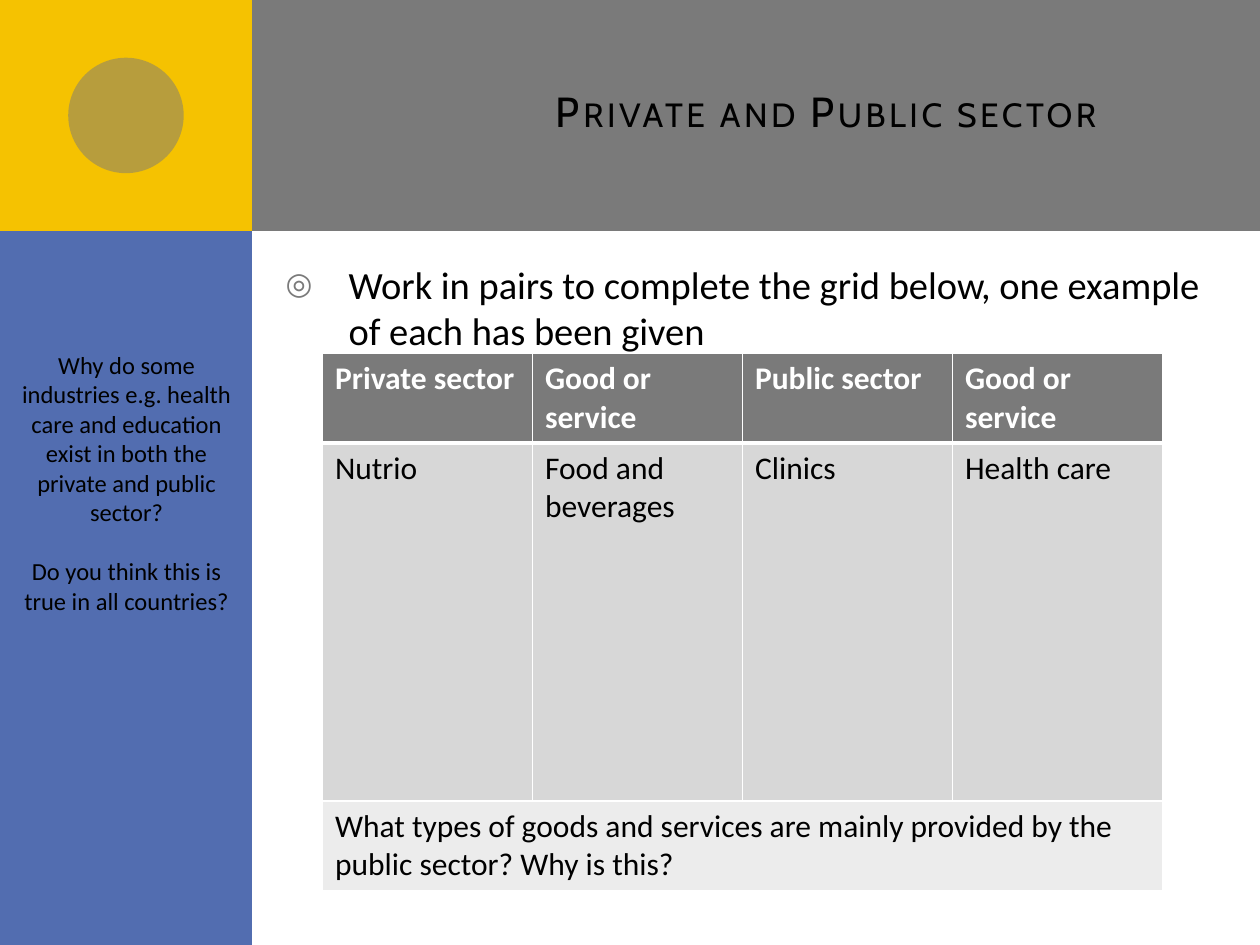
import pptx
import pptx.util
import pptx.dml.color
import pptx.enum.shapes
import pptx.enum.text
import pptx.oxml
import pptx.oxml.ns
from lxml import etree

Pt = pptx.util.Pt
ALIGN = pptx.enum.text.PP_ALIGN
ANCHOR = pptx.enum.text.MSO_ANCHOR
SHAPE = pptx.enum.shapes.MSO_SHAPE

# Content
TITLE = "Private and Public sector"
TASK = "Work in pairs to complete the grid below, one example of each has been given"
HEADERS = ["Private sector", "Good or service", "Public sector", "Good or service"]
EXAMPLES = ["Nutrio", "Food and beverages", "Clinics", "Health care"]
QUESTION = ("What types of goods and services are mainly provided by the "
            "public sector? Why is this?")
SIDE_QUESTIONS = [
    "Why do some industries e.g. health care and education exist in both "
    "the private and public sector?",
    "Do you think this is true in all countries?",
]

THEME = {
    "grey": "7A7A7A", "blue": "526DB0", "yellow": "F5C201",
    "text": "000000", "white": "FFFFFF", "example": "D7D7D7", "question": "ECECEC",
    "title_font": "Cabin", "body_font": "Calibri",
    "title_size": 24, "task_size": 22, "table_size": 18, "side_size": 14,
}

# Layout, in points
SLIDE_WIDTH, SLIDE_HEIGHT = 720, 540
SIDE_WIDTH, BANNER_HEIGHT, DOT = 144, 132, 66
BANNER_LEFT = 36
TABLE_LEFT, TABLE_TOP, COLUMN_WIDTH = 184.3, 202, 120
ROW_HEIGHTS = [51, 204.5, 51]

DECORATION = [  # preset, colour, box, opacity in percent
    (SHAPE.RECTANGLE, "grey",
     (BANNER_LEFT, 0, SLIDE_WIDTH - BANNER_LEFT, BANNER_HEIGHT), 100),
    (SHAPE.RECTANGLE, "blue", (0, 0, SIDE_WIDTH, SLIDE_HEIGHT), 100),
    (SHAPE.RECTANGLE, "yellow", (0, 0, SIDE_WIDTH, BANNER_HEIGHT), 100),
    (SHAPE.OVAL, "grey",
     ((SIDE_WIDTH - DOT) / 2, (BANNER_HEIGHT - DOT) / 2, DOT, DOT), 50),
]


def colour(name):
    return pptx.dml.color.RGBColor.from_string(THEME[name])


def points(box):
    return [Pt(value) for value in box]


def place(shape, box):
    shape.left, shape.top, shape.width, shape.height = points(box)


def fill(target, name):
    target.fill.solid()
    target.fill.fore_color.rgb = colour(name)


def format_text(text_frame, size, font="body_font", ink="text", bold=False,
                align=ALIGN.LEFT):
    for paragraph in text_frame.paragraphs:
        paragraph.alignment = align
        for run in paragraph.runs:
            run.font.name = THEME[font]
            run.font.size = Pt(THEME[size])
            run.font.bold = bold
            run.font.color.rgb = colour(ink)


def add_decoration(slide):
    group = slide.shapes.add_group_shape()
    for preset, name, box, opacity in DECORATION:
        shape = group.shapes.add_shape(preset, *points(box))
        shape.shadow.inherit = False
        shape.line.fill.background()
        fill(shape, name)
        if opacity < 100:
            solid = shape.fill._xPr.find(pptx.oxml.ns.qn("a:solidFill"))
            etree.SubElement(solid[0], pptx.oxml.ns.qn("a:alpha"),
                             val=str(opacity * 1000))
    slide.shapes._spTree.insert(2, group._element)  # behind the placeholders


def add_title(slide):
    title = slide.shapes.title
    place(title, (192, 18, 492, 90))
    title.text_frame.text = TITLE
    title.text_frame.vertical_anchor = ANCHOR.MIDDLE
    format_text(title.text_frame, "title_size", "title_font", align=ALIGN.RIGHT)
    properties = title.text_frame.paragraphs[0].runs[0]._r.get_or_add_rPr()
    properties.set("cap", "small")
    properties.set("spc", "200")


def add_task(slide):
    body = slide.placeholders[1]
    place(body, (156, 145.6, 550, 374.4))
    body.text_frame.text = TASK
    body.text_frame.auto_size = pptx.enum.text.MSO_AUTO_SIZE.NONE
    format_text(body.text_frame, "task_size")
    paragraph = body.text_frame.paragraphs[0]
    paragraph.space_before = Pt(18)
    properties = paragraph._p.get_or_add_pPr()
    properties.set("marL", str(Pt(36)))
    properties.set("indent", str(-Pt(36)))
    namespace = pptx.oxml.ns.nsdecls("a")
    for xml in (f'<a:buClr {namespace}><a:srgbClr val="{THEME["grey"]}"/></a:buClr>',
                f'<a:buSzPct {namespace} val="80000"/>',
                f'<a:buChar {namespace} char="◎"/>'):
        properties.append(pptx.oxml.parse_xml(xml))


def set_borders(cell, top, bottom):
    properties = cell._tc.get_or_add_tcPr()
    widths = {"lnL": 1, "lnR": 1, "lnT": top, "lnB": bottom}
    for index, (side, width) in enumerate(widths.items()):
        properties.insert(index, pptx.oxml.parse_xml(
            f'<a:{side} {pptx.oxml.ns.nsdecls("a")} w="{Pt(width)}"><a:solidFill>'
            f'<a:srgbClr val="{THEME["white"]}"/></a:solidFill></a:{side}>'))


def add_grid(slide):
    # Texts, fill, ink, rule above, rule below
    rows = [(HEADERS, "grey", "white", 1, 3),
            (EXAMPLES, "example", "text", 3, 1),
            ([QUESTION], "question", "text", 1, 1)]
    columns = len(HEADERS)
    box = (TABLE_LEFT, TABLE_TOP, columns * COLUMN_WIDTH, sum(ROW_HEIGHTS))
    table = slide.shapes.add_table(len(rows), columns, *points(box)).table
    for row_index, (texts, background, ink, top, bottom) in enumerate(rows):
        table.rows[row_index].height = Pt(ROW_HEIGHTS[row_index])
        for column in range(columns):
            cell = table.cell(row_index, column)
            fill(cell, background)
            set_borders(cell, top, bottom)
            if column < len(texts):
                cell.text_frame.text = texts[column]
                format_text(cell.text_frame, "table_size", ink=ink,
                            bold=row_index == 0)
    last = len(rows) - 1
    table.cell(last, 0).merge(table.cell(last, columns - 1))


def add_side_questions(slide):
    box = slide.shapes.add_textbox(*points((0, 196.4, 144.7, 160)))
    box.text_frame.word_wrap = True
    box.text_frame.text = "\n".join(SIDE_QUESTIONS)
    format_text(box.text_frame, "side_size", align=ALIGN.CENTER)
    box.text_frame.paragraphs[0].space_after = Pt(17)


def main():
    presentation = pptx.Presentation()
    presentation.slide_width, presentation.slide_height = points(
        (SLIDE_WIDTH, SLIDE_HEIGHT))
    slide = presentation.slides.add_slide(presentation.slide_layouts[1])
    add_decoration(slide)
    add_title(slide)
    add_task(slide)
    add_grid(slide)
    add_side_questions(slide)
    presentation.save("out.pptx")


if __name__ == "__main__":
    main()
